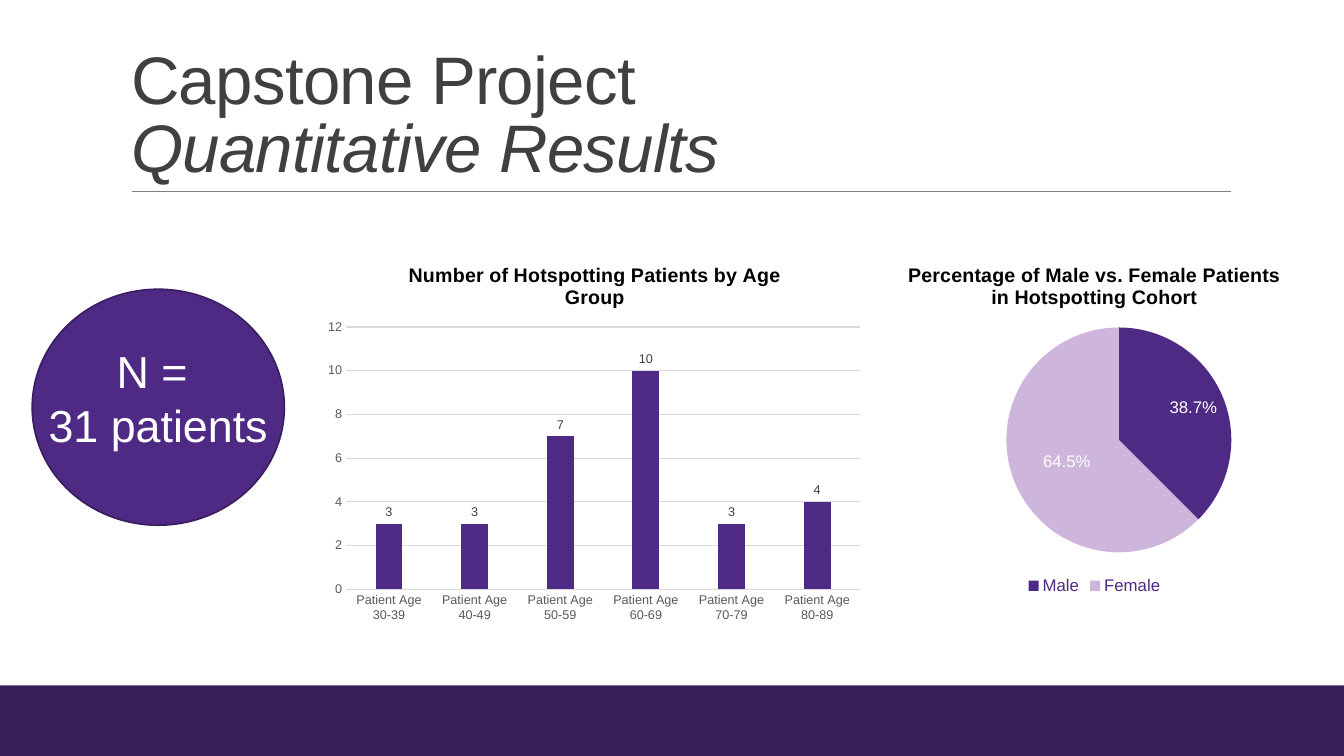
from dataclasses import dataclass
from typing import Any

from lxml.etree import SubElement as Sub
from pptx import Presentation
from pptx.chart.data import CategoryChartData as Data
from pptx.dml.color import RGBColor as Rgb
from pptx.enum.chart import XL_CHART_TYPE as Kind, XL_LABEL_POSITION as Spot
from pptx.enum.chart import XL_LEGEND_POSITION as Side, XL_TICK_MARK as Tick
from pptx.enum.shapes import MSO_CONNECTOR as Link, MSO_SHAPE as Form
from pptx.enum.text import MSO_ANCHOR as Anchor, MSO_AUTO_SIZE as Fit, PP_ALIGN as Align
from pptx.oxml.ns import qn
from pptx.util import Inches, Pt

HUES = {
    "band": "372058", "rule": "808080", "title": "404040", "grape": "4E2A84",
    "lilac": "CDB5DC", "edge": "3A1F62", "axis": "595959", "grid": "D9D9D9",
    "black": "000000", "white": "FFFFFF",
}


@dataclass
class Plot:
    """One chart: its frame in inches, inner plot area as fractions, and data."""
    kind: Any
    frame: tuple[float, ...]
    inner: tuple[float, ...]
    title: str
    cats: list[str]
    vals: list[float]
    form: str


BARS = Plot(
    Kind.COLUMN_CLUSTERED, (3.16, 2.44, 5.48, 3.83), (0.05, 0.21, 0.93, 0.68),
    "Number of Hotspotting Patients by Age Group",
    [f"Patient Age {age}-{age + 9}" for age in range(30, 90, 10)],
    [3, 3, 7, 10, 3, 4], "General")
PIE = Plot(
    Kind.PIE, (8.43, 2.44, 4.85, 3.5), (0.32, 0.23, 0.46, 0.64),
    "Percentage of Male vs. Female Patients in Hotspotting Cohort",
    ["Male", "Female"], [0.387, 0.645], "0.0%")


def hue(name: str) -> Rgb:
    return Rgb.from_string(HUES[name])


def apply(item: Any, **form: Any) -> None:
    for key, val in form.items():
        setattr(item, key, val)


def style(font: Any, size: float, tint: str, **more: Any) -> None:
    apply(font, name="Arial", size=Pt(size), **more)
    font.color.rgb = hue(tint)


def paint(fill: Any, tint: str) -> None:
    fill.solid()
    fill.fore_color.rgb = hue(tint)


def stroke(line: Any, tint: str, width: float) -> None:
    line.color.rgb = hue(tint)
    line.width = Pt(width)


def shape(slide: Any, form: Any, frame: tuple[float, ...], tint: str) -> Any:
    item = slide.shapes.add_shape(form, *map(Inches, frame))
    item.shadow.inherit = False
    paint(item.fill, tint)
    item.line.fill.background()
    return item


def draw(slide: Any, plot: Plot) -> Any:
    data = Data(number_format=plot.form)
    data.categories = plot.cats
    data.add_series("Series 1", plot.vals)
    chart = slide.shapes.add_chart(plot.kind, *map(Inches, plot.frame), data).chart
    style(chart.font, 10, "black")
    chart.has_legend = False
    chart.has_title = True
    text = chart.chart_title.text_frame
    text.text = plot.title
    style(text.paragraphs[0].runs[0].font, 14, "black", bold=True)
    chart.chart_title.include_in_layout = False
    # Fixed inner plot area
    area = chart.plots[0]
    area.vary_by_categories = plot.kind == Kind.PIE
    root = chart.element.chart.plotArea
    for old in root.findall(qn("c:layout")):
        root.remove(old)
    lay = Sub(root, qn("c:layout"))
    root.insert(0, lay)
    man = Sub(lay, qn("c:manualLayout"))
    marks = [("layoutTarget", "inner"), ("xMode", "edge"), ("yMode", "edge"),
             *zip("xywh", plot.inner)]
    for tag, val in marks:
        Sub(man, qn(f"c:{tag}")).set("val", str(val))
    area.has_data_labels = True
    return chart


def bars(slide: Any) -> None:
    chart = draw(slide, BARS)
    area = chart.plots[0]
    apply(area, gap_width=219, overlap=-27)
    paint(area.series[0].format.fill, "grape")
    apply(area.data_labels, show_value=True, position=Spot.OUTSIDE_END)
    style(area.data_labels.font, 9, "title")
    for axis in (chart.category_axis, chart.value_axis):
        apply(axis, major_tick_mark=Tick.NONE, minor_tick_mark=Tick.NONE)
        style(axis.tick_labels.font, 9, "axis")
    stroke(chart.category_axis.format.line, "grid", 0.75)
    axis = chart.value_axis
    apply(axis, minimum_scale=0, maximum_scale=12, major_unit=2)
    axis.format.line.fill.background()
    stroke(axis.major_gridlines.format.line, "grid", 0.75)


def pie(slide: Any) -> None:
    chart = draw(slide, PIE)
    area = chart.plots[0]
    apply(area.data_labels, show_value=True, show_percentage=False,
          number_format="0.0%", number_format_is_linked=False)
    style(area.data_labels.font, 12, "white")
    looks = [("grape", Spot.INSIDE_END), ("lilac", Spot.CENTER)]
    for num, (tint, spot) in enumerate(looks):
        point = area.series[0].points[num]
        paint(point.format.fill, tint)
        style(point.data_label.font, 12, "white")
        point.data_label.position = spot
    chart.has_legend = True
    apply(chart.legend, position=Side.BOTTOM, include_in_layout=False)
    style(chart.legend.font, 12, "grape")


def head(slide: Any) -> None:
    box = slide.shapes.title
    apply(box, left=Inches(1.2), top=Inches(0.31), width=Inches(11), height=Inches(1.59))
    text = box.text_frame
    apply(text, word_wrap=True, auto_size=Fit.NONE, vertical_anchor=Anchor.BOTTOM)
    para = text.paragraphs[0]
    apply(para, alignment=Align.LEFT, line_spacing=0.85)
    for num, words in enumerate(("Capstone Project", "Quantitative Results")):
        if num:
            para.add_line_break()
        run = para.add_run()
        run.text = words
        style(run.font, 48, "title", italic=bool(num))
        run.font._element.set("spc", "-50")


def badge(slide: Any) -> None:
    disc = shape(slide, Form.OVAL, (0.32, 2.87, 2.5, 2.34), "grape")
    stroke(disc.line, "edge", 1.25)
    box = slide.shapes.add_textbox(*map(Inches, (0.32, 3.36, 2.5, 1.18)))
    text = box.text_frame
    apply(text, word_wrap=True, auto_size=Fit.SHAPE_TO_FIT_TEXT)
    text.text = "N = \n31 patients"
    for para in text.paragraphs:
        para.alignment = Align.CENTER
        style(para.runs[0].font, 32, "white")


def main() -> None:
    deck = Presentation()
    apply(deck, slide_width=Inches(13.33), slide_height=Inches(7.5))
    slide = deck.slides.add_slide(deck.slide_layouts[5])
    # Bottom band and title rule
    shape(slide, Form.RECTANGLE, (0, 6.8, 13.33, 0.7), "band")
    rule = slide.shapes.add_connector(Link.STRAIGHT, *map(Inches, (1.31, 1.9, 12.21, 1.9)))
    stroke(rule.line, "rule", 0.5)
    Sub(rule._element.spPr, qn("a:effectLst"))
    # Title, charts and patient count
    head(slide)
    bars(slide)
    pie(slide)
    badge(slide)
    deck.save("out.pptx")


if __name__ == "__main__":
    main()
